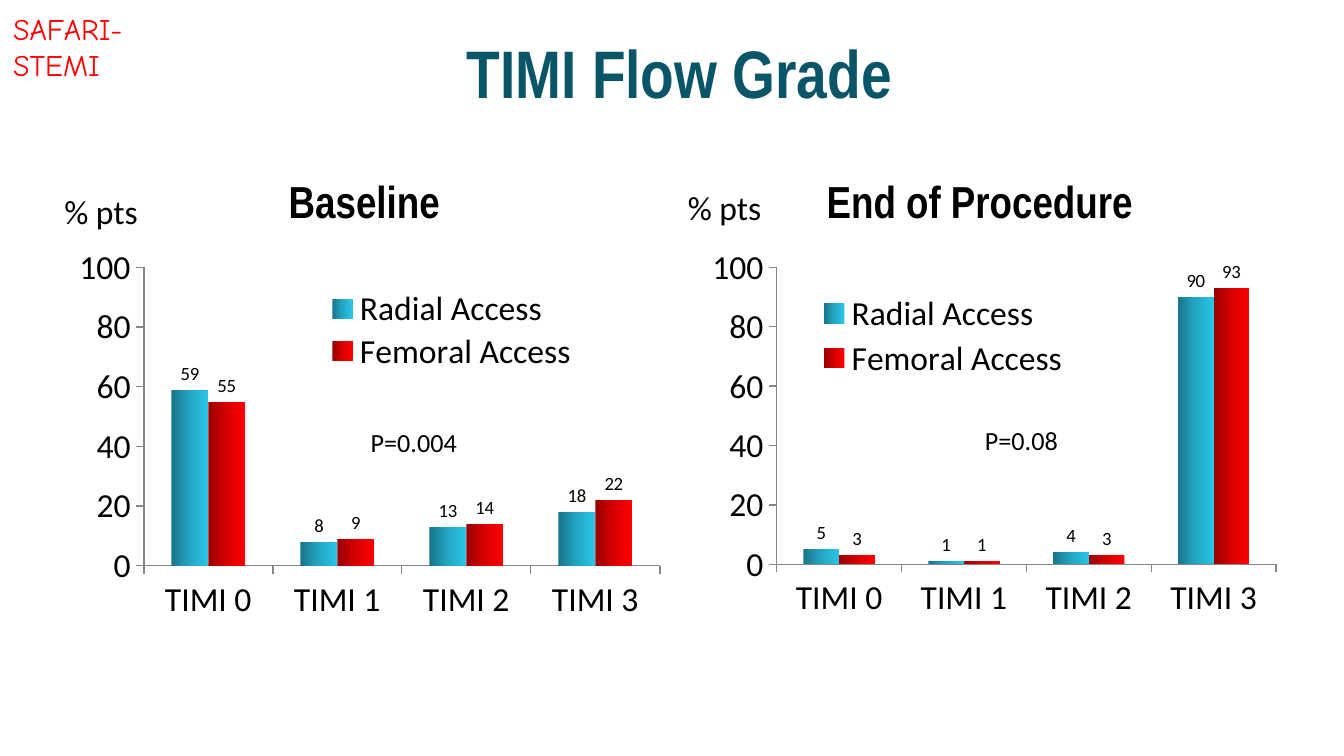
from lxml.etree import SubElement
from pptx import Presentation
from pptx.chart.data import CategoryChartData
from pptx.dml.color import RGBColor
from pptx.enum.chart import XL_CHART_TYPE, XL_LABEL_POSITION, XL_LEGEND_POSITION, XL_TICK_MARK
from pptx.enum.text import MSO_ANCHOR, PP_ALIGN
from pptx.oxml import parse_xml
from pptx.oxml.ns import nsdecls, qn
from pptx.util import Inches, Pt

THEME = {
    "heading_font": "Arial Narrow",
    "body_font": "Calibri",
    "study_font": "Comic Neue",
    "title_color": "0B5569",
    "text_color": "000000",
    "study_color": "FF0000",
    "axis_color": "868686",
    "title_size": 36,
    "heading_size": 24,
    "chart_size": 18,
    "study_size": 16,
    "p_value_size": 14,
    "label_size": 10,
    "gradients": [
        [(0, "197589"), (50, "23A6C3"), (100, "2AC5E7")],
        [(0, "970000"), (50, "D70000"), (100, "FF0000")],
    ],
}

TITLE = "TIMI Flow Grade"
STUDY = "SAFARI-STEMI"
UNIT = "% pts"
GRADES = ["TIMI 0", "TIMI 1", "TIMI 2", "TIMI 3"]
ACCESS = ["Radial Access", "Femoral Access"]
PANELS = [
    {
        "heading": "Baseline",
        "values": [(59, 8, 13, 18), (55, 9, 14, 22)],
        "left": 0.5,
        "height": 3.24,
        "plot": (0.57, 0.21, 3.84, 2.22),
        "legend": (1.89, 0.35, 1.94, 0.65),
        "p_value": ("P=0.004", (2.66, 3.12, 0.85, 0.34)),
        "unit_box": (0.38, 1.37, 0.75, 0.4),
    },
    {
        "heading": "End of Procedure",
        "values": [(5, 1, 4, 90), (3, 1, 3, 93)],
        "left": 5.08,
        "height": 3.11,
        "plot": (0.7, 0.21, 3.72, 2.21),
        "legend": (0.97, 0.37, 1.94, 0.7),
        "p_value": ("P=0.08", (7.23, 3.11, 0.75, 0.34)),
        "unit_box": (5.02, 1.34, 0.75, 0.4),
    },
]
SLIDE_WIDTH = 10
SLIDE_HEIGHT = SLIDE_WIDTH * 9 / 16
PANEL_WIDTH = 4.42
HEADING_TOP, HEADING_HEIGHT = 1.22, 0.52
CHART_TOP = 1.78


def style_font(font, name, size, color, bold=False):
    font.name = name
    font.size = Pt(size)
    font.bold = bold
    font.color.rgb = RGBColor.from_string(color)


def add_text(page, text, place, font, size, color, bold=False, wrap=True,
             align=PP_ALIGN.LEFT, anchor=MSO_ANCHOR.TOP):
    box = page.shapes.add_textbox(*map(Inches, place))
    frame = box.text_frame
    frame.word_wrap = wrap
    frame.vertical_anchor = anchor
    frame.text = text
    para = frame.paragraphs[0]
    para.alignment = align
    style_font(para.runs[0].font, font, size, color, bold)


def make_layout(place, chart_height, inner=False):
    layout = parse_xml(f"<c:layout {nsdecls('c')}/>")
    manual = SubElement(layout, qn("c:manualLayout"))
    sides = (PANEL_WIDTH, chart_height) * 2
    fractions = [length / side for length, side in zip(place, sides)]
    settings = [("layoutTarget", "inner")] if inner else []
    settings += [("xMode", "edge"), ("yMode", "edge"), *zip("xywh", fractions)]
    for tag, value in settings:
        SubElement(manual, qn(f"c:{tag}")).set("val", str(value))
    return layout


def fill_gradient(series, stops):
    stop_xml = "".join(
        f'<a:gs pos="{position * 1000}"><a:srgbClr val="{color}"/></a:gs>'
        for position, color in stops
    )
    series.format.fill.background()
    properties = series.format.fill._xPr
    properties.replace(properties.find(qn("a:noFill")), parse_xml(
        f'<a:gradFill {nsdecls("a")} rotWithShape="1"><a:gsLst>{stop_xml}</a:gsLst>'
        '<a:lin ang="0" scaled="0"/></a:gradFill>'
    ))


def style_axis(axis):
    axis.has_major_gridlines = False
    axis.major_tick_mark = XL_TICK_MARK.OUTSIDE
    axis.minor_tick_mark = XL_TICK_MARK.NONE
    axis.format.line.color.rgb = RGBColor.from_string(THEME["axis_color"])
    axis.format.line.width = Pt(0.75)


def add_panel_chart(page, panel):
    data = CategoryChartData(number_format="0")
    data.categories = GRADES
    for name, values in zip(ACCESS, panel["values"]):
        data.add_series(name, values)
    place = (panel["left"], CHART_TOP, PANEL_WIDTH, panel["height"])
    chart = page.shapes.add_chart(
        XL_CHART_TYPE.COLUMN_CLUSTERED, *map(Inches, place), data
    ).chart
    chart.has_title = False
    style_font(chart.font, THEME["body_font"], THEME["chart_size"], THEME["text_color"])

    style_axis(chart.category_axis)
    value_axis = chart.value_axis
    style_axis(value_axis)
    value_axis.minimum_scale = 0
    value_axis.maximum_scale = 100
    value_axis.major_unit = 20
    value_axis.tick_labels.number_format = "0"
    value_axis.tick_labels.number_format_is_linked = False

    plot = chart.plots[0]
    plot.vary_by_categories = False
    plot.gap_width = 150
    plot.overlap = 0
    for series, stops in zip(plot.series, THEME["gradients"]):
        fill_gradient(series, stops)
        labels = series.data_labels
        labels.show_value = True
        labels.number_format = "0"
        labels.number_format_is_linked = False
        labels.position = XL_LABEL_POSITION.OUTSIDE_END
        style_font(labels.font, THEME["body_font"], THEME["label_size"], THEME["text_color"])

    chart.has_legend = True
    legend = chart.legend
    legend.position = XL_LEGEND_POSITION.RIGHT
    legend.include_in_layout = False
    style_font(legend.font, THEME["body_font"], THEME["chart_size"], THEME["text_color"])

    plot_area = chart._chartSpace.chart.plotArea
    legend_element = legend._element
    for element in (plot_area, legend_element):
        for layout in element.findall(qn("c:layout")):
            element.remove(layout)
    plot_area.insert(0, make_layout(panel["plot"], panel["height"], inner=True))
    legend_element.find(qn("c:legendPos")).addnext(
        make_layout(panel["legend"], panel["height"]))


def main():
    deck = Presentation()
    deck.slide_width = Inches(SLIDE_WIDTH)
    deck.slide_height = Inches(SLIDE_HEIGHT)
    page = deck.slides.add_slide(deck.slide_layouts[6])

    add_text(page, TITLE, (0.44, 0.1, 9.23, 0.86), THEME["heading_font"],
             THEME["title_size"], THEME["title_color"], bold=True,
             align=PP_ALIGN.CENTER, anchor=MSO_ANCHOR.MIDDLE)
    for panel in PANELS:
        add_text(page, panel["heading"],
                 (panel["left"], HEADING_TOP, PANEL_WIDTH, HEADING_HEIGHT),
                 THEME["heading_font"], THEME["heading_size"], THEME["text_color"],
                 bold=True, align=PP_ALIGN.CENTER, anchor=MSO_ANCHOR.BOTTOM)
        add_panel_chart(page, panel)
    for panel in PANELS:
        add_text(page, *panel["p_value"], THEME["body_font"],
                 THEME["p_value_size"], THEME["text_color"], wrap=False)
    for panel in PANELS:
        add_text(page, UNIT, panel["unit_box"], THEME["body_font"],
                 THEME["chart_size"], THEME["text_color"], wrap=False)
    add_text(page, STUDY, (0, 0.03, 1.28, 0.37), THEME["study_font"],
             THEME["study_size"], THEME["study_color"])
    deck.save("out.pptx")


if __name__ == "__main__":
    main()
